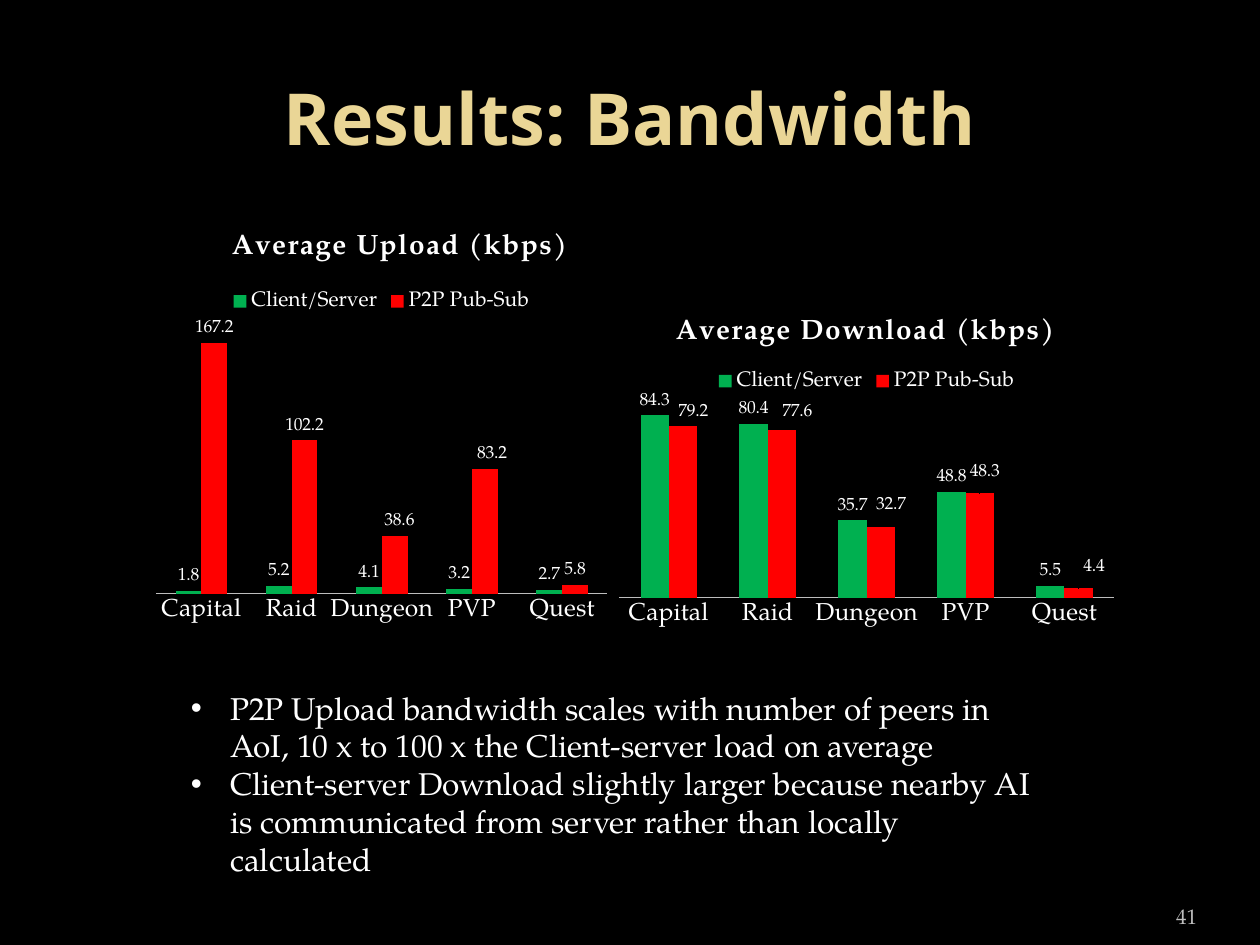
from dataclasses import dataclass

from lxml.etree import SubElement
from pptx import Presentation
from pptx.chart.data import CategoryChartData
from pptx.dml.color import RGBColor
from pptx.enum.chart import (XL_CHART_TYPE, XL_LABEL_POSITION, XL_LEGEND_POSITION,
                             XL_TICK_MARK)
from pptx.enum.text import MSO_ANCHOR, PP_ALIGN
from pptx.oxml import parse_xml
from pptx.oxml.ns import nsdecls, qn
from pptx.util import Pt


@dataclass(frozen=True)
class Theme:
    background: str = "000000"
    title: str = "EAD696"
    text: str = "FFFFFF"
    muted: str = "BDBDBD"
    series: tuple = ("00B050", "FF0000")
    heading_font: str = "Noto Sans"
    body_font: str = "TeX Gyre Pagella"
    title_size: int = 41
    body_size: int = 18
    chart_title_size: int = 16
    category_size: int = 14
    small_size: int = 12
    label_size: int = 10


THEME = Theme()
SCENARIOS = ("Capital", "Raid", "Dungeon", "PVP", "Quest")
SERIES_NAMES = ("Client/Server", "P2P Pub-Sub")
FINDINGS = (
    "P2P Upload bandwidth scales with number of peers in AoI, "
    "10 x to 100 x the Client-server load on average",
    "Client-server Download slightly larger because nearby AI is communicated "
    "from server rather than locally calculated",
)


@dataclass(frozen=True)
class BandwidthChart:
    title: str
    box: tuple             # left, top, width, height in points
    values: tuple          # one row per series
    maximum: int
    title_at: tuple        # the places below are fractions of the chart
    legend_at: tuple
    plot_at: tuple
    label_shifts: dict     # P2P point index -> label offset


CHARTS = (
    BandwidthChart(
        "Average Upload (kbps)", (84, 120, 268.5, 241),
        ((1.8, 5.2, 4.1, 3.2, 2.7), (167.2, 102.2, 38.6, 83.2, 5.8)), 180,
        (0.17, 0.04), (0.17, 0.18), (0.02, 0.27, 0.96, 0.64),
        {2: (0.01, 0), 3: (0.015, 0)}),
    BandwidthChart(
        "Average Download (kbps)", (348, 168, 294.5, 195),
        ((84.3, 80.4, 35.7, 48.8, 5.5), (79.2, 77.6, 32.7, 48.3, 4.4)), 90,
        (0.12, 0.05), (0.2, 0.21), (0.02, 0.32, 0.96, 0.57),
        {0: (0.02, 0), 1: (0.03, -0.01), 2: (0.02, -0.02),
         3: (0.01, -0.02), 4: (0.03, -0.02)}),
)


def style_font(font, size, color=THEME.text, name=THEME.body_font, bold=False):
    font.size = Pt(size)
    font.name = name
    font.bold = bold
    font.color.rgb = RGBColor.from_string(color)


def add_text(slide, box, lines, size, color=THEME.text, name=THEME.body_font,
             bold=False, align=PP_ALIGN.LEFT, anchor=MSO_ANCHOR.TOP, side_inset=7.2):
    shape = slide.shapes.add_textbox(*map(Pt, box))
    text_frame = shape.text_frame
    text_frame.word_wrap = True
    text_frame.vertical_anchor = anchor
    text_frame.margin_left = text_frame.margin_right = Pt(side_inset)
    text_frame.text = "\n".join(lines)
    for paragraph in text_frame.paragraphs:
        paragraph.alignment = align
        for run in paragraph.runs:
            style_font(run.font, size, color, name, bold)
    return shape


def add_bullets(shape, indent):
    for paragraph in shape.text_frame.paragraphs:
        properties = paragraph._p.get_or_add_pPr()
        properties.set("marL", str(Pt(indent)))
        properties.set("indent", str(Pt(-indent)))
        SubElement(properties, qn("a:buFont"), typeface="Arial")
        SubElement(properties, qn("a:buChar"), char="•")


def manual_layout(place, absolute=True, inner=False):
    """Build a c:layout from x, y and, if given, width and height."""
    parts = ['<c:layoutTarget val="inner"/>'] if inner else []
    if absolute:
        parts.append('<c:xMode val="edge"/><c:yMode val="edge"/>')
    parts += [f'<c:{key} val="{value}"/>' for key, value in zip("xywh", place)]
    return parse_xml(f'<c:layout {nsdecls("c")}><c:manualLayout>{"".join(parts)}'
                     '</c:manualLayout></c:layout>')


def place_after(element, tag, layout):
    for old in element.findall(qn("c:layout")):
        element.remove(old)
    element.find(qn(tag)).addnext(layout)


def style_axes(chart, maximum):
    category_axis = chart.category_axis
    category_axis.major_tick_mark = XL_TICK_MARK.NONE
    category_axis.format.line.color.rgb = RGBColor.from_string(THEME.muted)
    category_axis.format.line.width = Pt(0.75)
    style_font(category_axis.tick_labels.font, THEME.category_size)
    value_axis = chart.value_axis
    value_axis.minimum_scale, value_axis.maximum_scale = 0, maximum
    value_axis.has_major_gridlines = False
    value_axis.visible = False


def style_series(plot, label_shifts):
    plot.gap_width, plot.overlap = 150, 0
    plot.vary_by_categories = False
    for series, color in zip(plot.series, THEME.series):
        series.format.fill.solid()
        series.format.fill.fore_color.rgb = RGBColor.from_string(color)
        labels = series.data_labels
        labels.show_value = True
        labels.position = XL_LABEL_POSITION.OUTSIDE_END
        style_font(labels.font, THEME.label_size)
    # Shifted labels of the last series
    for index, shift in label_shifts.items():
        label = series.points[index].data_label
        style_font(label.font, THEME.label_size)
        label.position = XL_LABEL_POSITION.OUTSIDE_END
        element = series.data_labels._element.find(f"{qn('c:dLbl')}[{len(label_shifts)}]")
        for element in series.data_labels._element.findall(qn("c:dLbl")):
            if element.find(qn("c:idx")).get("val") == str(index):
                place_after(element, "c:idx", manual_layout(shift, absolute=False))


def add_bandwidth_chart(slide, content):
    data = CategoryChartData()
    data.categories = SCENARIOS
    for name, values in zip(SERIES_NAMES, content.values):
        data.add_series(name, values)
    chart = slide.shapes.add_chart(
        XL_CHART_TYPE.COLUMN_CLUSTERED, *map(Pt, content.box), data).chart
    style_font(chart.font, THEME.label_size)
    style_axes(chart, content.maximum)
    style_series(chart.plots[0], content.label_shifts)

    # Title
    chart.has_title = True
    paragraph = chart.chart_title.text_frame.paragraphs[0]
    paragraph.text = content.title
    for run in paragraph.runs:
        style_font(run.font, THEME.chart_title_size, bold=True)
        run.font._element.set("spc", "100")
    place_after(chart.chart_title._element, "c:tx", manual_layout(content.title_at))

    # Legend
    chart.has_legend = True
    chart.legend.position = XL_LEGEND_POSITION.TOP
    chart.legend.include_in_layout = False
    style_font(chart.legend.font, THEME.small_size)
    place_after(chart.legend._element, "c:legendPos", manual_layout(content.legend_at))

    # Plot area
    plot_area = chart._chartSpace.chart.plotArea
    for old in plot_area.findall(qn("c:layout")):
        plot_area.remove(old)
    plot_area.insert(0, manual_layout(content.plot_at, inner=True))


def main():
    presentation = Presentation()
    presentation.slide_width, presentation.slide_height = Pt(720), Pt(540)
    slide = presentation.slides.add_slide(presentation.slide_layouts[6])
    slide.background.fill.solid()
    slide.background.fill.fore_color.rgb = RGBColor.from_string(THEME.background)

    # Heading and page number
    add_text(slide, (36, 21.6, 648, 90), ["Results: Bandwidth"], THEME.title_size,
             THEME.title, THEME.heading_font, True, PP_ALIGN.CENTER, MSO_ANCHOR.MIDDLE)
    add_text(slide, (624, 505.5, 60, 28.8), ["41"], THEME.small_size, THEME.muted,
             align=PP_ALIGN.RIGHT, anchor=MSO_ANCHOR.BOTTOM, side_inset=0)

    # Findings
    findings = add_text(slide, (102, 390, 498, 115), FINDINGS, THEME.body_size)
    add_bullets(findings, 22.5)

    # Charts
    for content in CHARTS:
        add_bandwidth_chart(slide, content)
    presentation.save("out.pptx")


if __name__ == "__main__":
    main()
